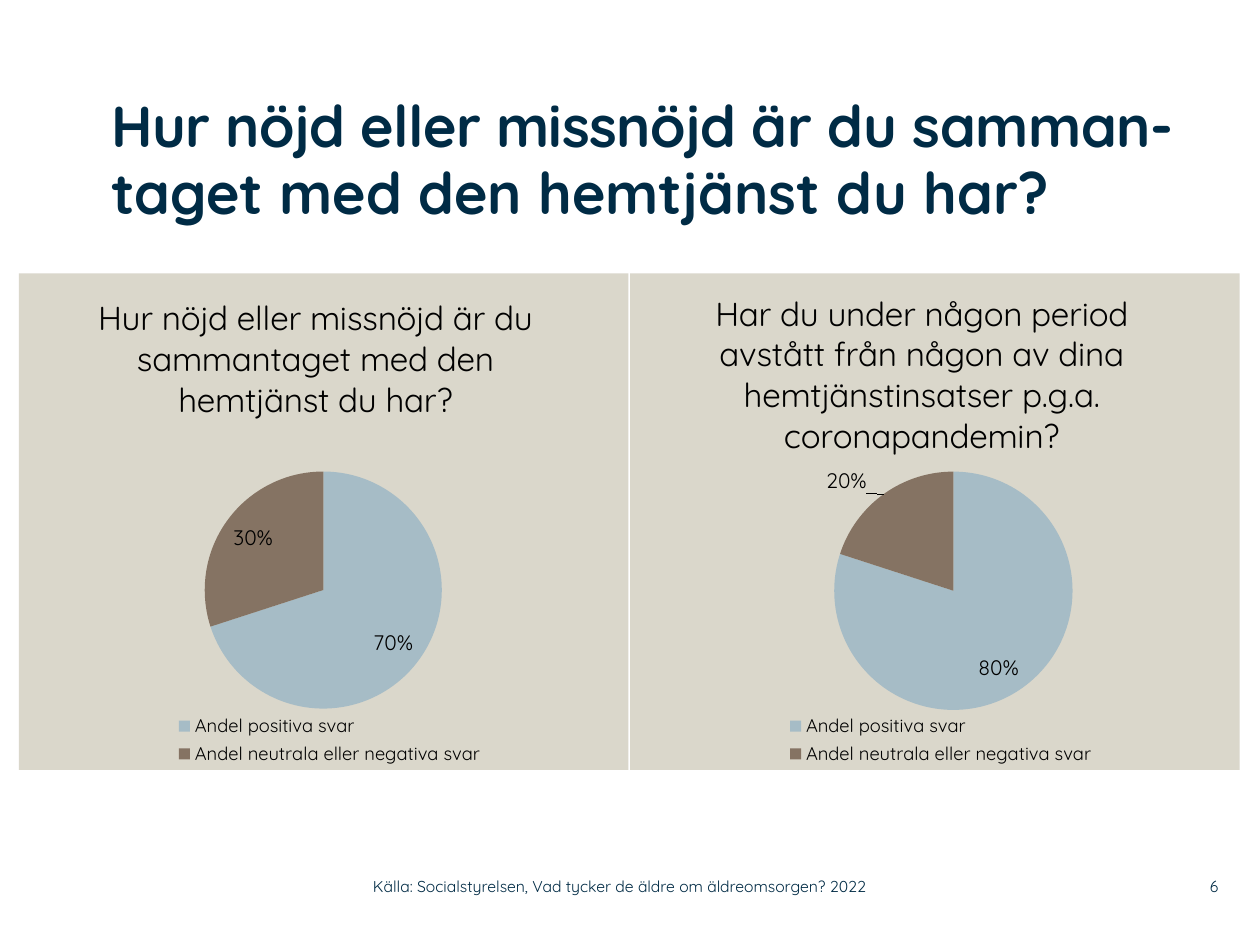
from dataclasses import dataclass

import lxml.etree
import pptx
import pptx.chart.data
import pptx.dml.color
import pptx.enum.chart
import pptx.enum.text
import pptx.oxml
import pptx.oxml.ns
import pptx.util

Cm, Pt = pptx.util.Cm, pptx.util.Pt
qn = pptx.oxml.ns.qn
LABEL_POSITION = pptx.enum.chart.XL_LABEL_POSITION
ALIGN = pptx.enum.text.PP_ALIGN


@dataclass(frozen=True)
class Theme:
    font: str = "Quicksand"
    navy: str = "002B45"
    black: str = "000000"
    panel: str = "DAD7CB"
    slices: tuple = ("A6BCC6", "857363")
    title_size: float = 33
    chart_size: float = 18
    chart_title_size: float = 19
    label_size: float = 12
    legend_size: float = 10.5
    footer_size: float = 9


@dataclass(frozen=True)
class Box:
    left: float
    top: float
    width: float
    height: float

    def lengths(self):
        return Cm(self.left), Cm(self.top), Cm(self.width), Cm(self.height)


THEME = Theme()
CATEGORIES = ("Andel positiva svar", "Andel neutrala eller negativa svar")
LEGEND_AREA = (0.24, 0.88, 0.54, 0.12)


def rgb(value):
    return pptx.dml.color.RGBColor.from_string(value)


def style_font(font, size, color, bold=False):
    font.name, font.size, font.bold = THEME.font, Pt(size), bold
    font.color.rgb = rgb(color)


def prepare_frame(frame, anchor):
    frame.margin_left = frame.margin_right = 0
    frame.margin_top = frame.margin_bottom = 0
    frame.word_wrap = True
    frame.vertical_anchor = anchor


def manual_layout(area, inner=False, offset=False):
    """Make a chart layout element from fractions of the chart area."""
    layout = lxml.etree.Element(qn("c:layout"))
    manual = lxml.etree.SubElement(layout, qn("c:manualLayout"))
    settings = [("layoutTarget", "inner")] if inner else []
    if not offset:
        settings += [("xMode", "edge"), ("yMode", "edge")]
    settings += zip("xywh", area)
    for tag, value in settings:
        lxml.etree.SubElement(manual, qn(f"c:{tag}")).set("val", str(value))
    return layout


def place_part(element, layout, after=None):
    """Give a chart element its layout, directly after the named child."""
    for old in element.findall(qn("c:layout")):
        element.remove(old)
    if after is None:
        element.insert(0, layout)
    else:
        element.find(qn(after)).addnext(layout)


def add_title(page, box):
    title = page.shapes.title
    title.left, title.top, title.width, title.height = box.lengths()
    frame = title.text_frame
    prepare_frame(frame, pptx.enum.text.MSO_ANCHOR.TOP)
    frame.auto_size = pptx.enum.text.MSO_AUTO_SIZE.NONE
    para = frame.paragraphs[0]
    para.alignment = ALIGN.LEFT
    para.line_spacing = 0.96
    for text, spacing in (("Hur nöjd eller missnöjd är du samman-", -30),
                          ("taget med den hemtjänst du har?", 0)):
        span = para.add_run()
        span.text = text
        style_font(span.font, THEME.title_size, THEME.navy, bold=True)
        span.font._element.set("spc", str(spacing))


def add_footer_text(page, box, text, align=ALIGN.LEFT):
    frame = page.shapes.add_textbox(*box.lengths()).text_frame
    prepare_frame(frame, pptx.enum.text.MSO_ANCHOR.MIDDLE)
    para = frame.paragraphs[0]
    para.alignment = align
    span = para.add_run()
    span.text = text
    style_font(span.font, THEME.footer_size, THEME.navy)


def move_label_outside(point, offset):
    """Show one percentage beside its slice, with a leader line."""
    label = point.data_label
    style_font(label.font, THEME.label_size, THEME.black)
    label.position = LABEL_POSITION.OUTSIDE_END
    element = point._ser.find(qn("c:dLbls")).find(qn("c:dLbl"))
    element.find(qn("c:showVal")).set("val", "0")
    element.find(qn("c:showPercent")).set("val", "1")
    place_part(element, manual_layout(offset, offset=True), after="c:idx")


def add_pie(page, box, question, values, title_at, plot_area, outside=None):
    data = pptx.chart.data.CategoryChartData()
    data.categories = CATEGORIES
    data.add_series("Series 1", values)
    chart = page.shapes.add_chart(
        pptx.enum.chart.XL_CHART_TYPE.PIE, *box.lengths(), data).chart
    style_font(chart.font, THEME.chart_size, THEME.black)

    # Panel behind the pie
    chart._chartSpace.find(qn("c:chart")).addnext(pptx.oxml.parse_xml(
        f'<c:spPr {pptx.oxml.ns.nsdecls("c", "a")}><a:solidFill>'
        f'<a:srgbClr val="{THEME.panel}"/></a:solidFill>'
        '<a:ln><a:noFill/></a:ln></c:spPr>'))

    # Question above the pie
    chart.has_title = True
    span = chart.chart_title.text_frame.paragraphs[0].add_run()
    span.text = question
    style_font(span.font, THEME.chart_title_size, THEME.black)
    place_part(chart.chart_title._element, manual_layout(title_at), after="c:tx")

    # Legend
    chart.has_legend = True
    legend = chart.legend
    legend.position = pptx.enum.chart.XL_LEGEND_POSITION.BOTTOM
    legend.include_in_layout = False
    style_font(legend.font, THEME.legend_size, THEME.black)
    place_part(legend._element, manual_layout(LEGEND_AREA), after="c:legendPos")

    # Slices and percentages
    plot = chart.plots[0]
    plot.vary_by_categories = True
    place_part(plot._element.getparent(), manual_layout(plot_area, inner=True))
    series = plot.series[0]
    for index, color in enumerate(THEME.slices):
        part = series.points[index].format
        part.fill.solid()
        part.fill.fore_color.rgb = rgb(color)
        part.line.fill.background()
    labels = series.data_labels
    labels.show_value, labels.show_percentage = False, True
    labels.number_format, labels.number_format_is_linked = "0%", False
    labels.position = LABEL_POSITION.INSIDE_END
    style_font(labels.font, THEME.label_size, THEME.black)
    if outside:
        move_label_outside(series.points[1], outside)
        leader = labels._element.find(qn("c:showLeaderLines"))
        if leader is None:
            leader = lxml.etree.SubElement(labels._element, qn("c:showLeaderLines"))
        leader.set("val", "1")


def main():
    deck = pptx.Presentation()
    deck.slide_width, deck.slide_height = Cm(25.4), Cm(19.05)
    page = deck.slides.add_slide(deck.slide_layouts[5])

    add_title(page, Box(2.24, 1.9, 22.71, 3.61))
    add_pie(page, Box(12.7, 5.51, 12.29, 10.01),
            "Har du under någon period avstått från någon av dina "
            "hemtjänstinsatser p.g.a. coronapandemin?",
            (80, 20), (0.13, 0.02), (0.335, 0.399, 0.391, 0.481),
            outside=(-0.02, 0.01))
    add_pie(page, Box(0.38, 5.51, 12.29, 10.01),
            "Hur nöjd eller missnöjd är du sammantaget med den "
            "hemtjänst du har?",
            (70, 30), (0.12, 0.03), (0.305, 0.399, 0.389, 0.478))

    # Source and page number
    add_footer_text(page, Box(7.52, 17.5, 11.25, 0.74),
                    "Källa: Socialstyrelsen, Vad tycker de äldre om "
                    "äldreomsorgen? 2022")
    add_footer_text(page, Box(23.37, 17.5, 1.19, 0.74), "6", ALIGN.RIGHT)
    deck.save("out.pptx")


if __name__ == "__main__":
    main()
